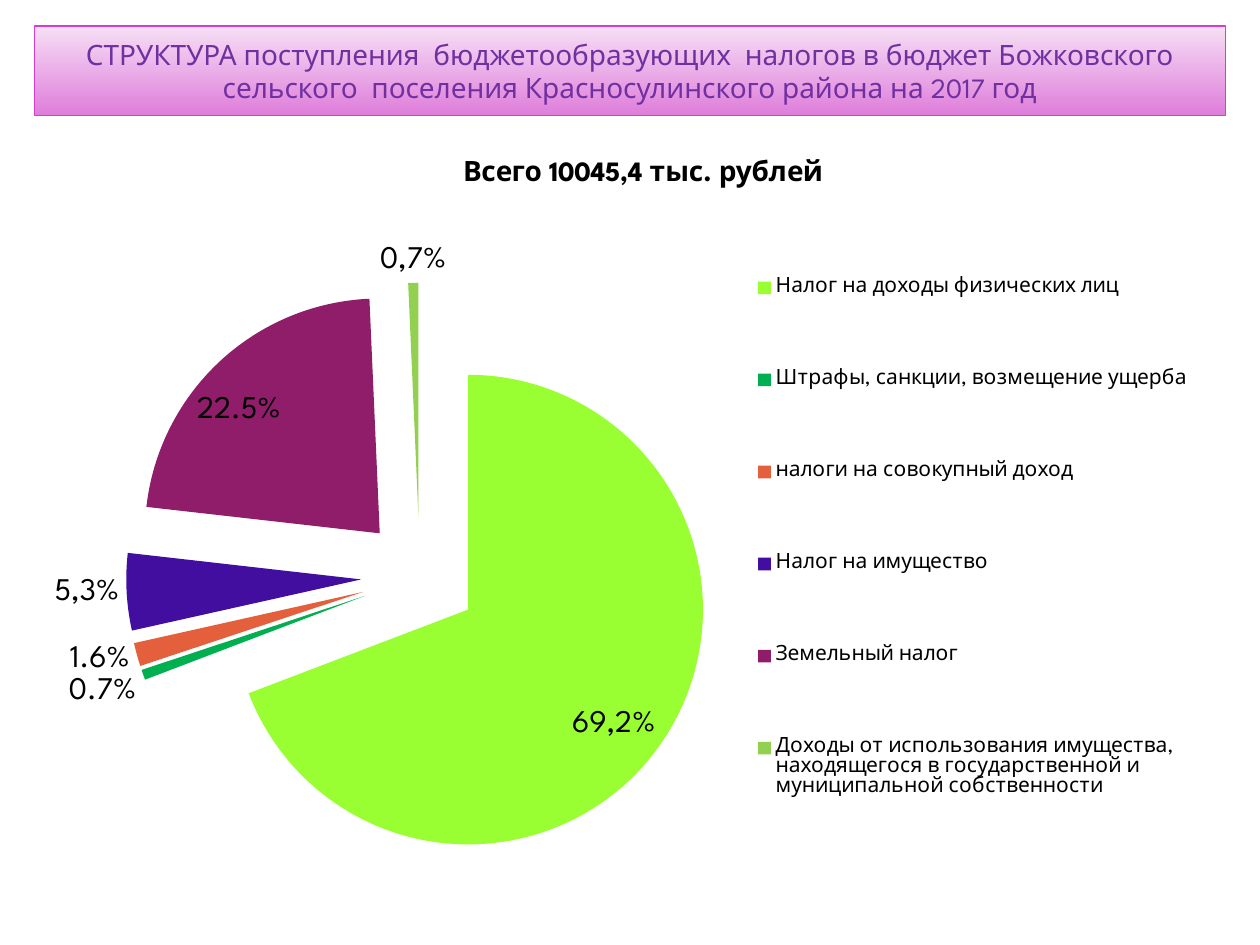
from dataclasses import dataclass

from lxml.etree import Element, SubElement
from pptx import Presentation
from pptx.chart.data import CategoryChartData
from pptx.dml.color import RGBColor
from pptx.enum.chart import XL_CHART_TYPE as ChartType
from pptx.enum.chart import XL_LABEL_POSITION as LabelPlace
from pptx.enum.chart import XL_LEGEND_POSITION as LegendPlace
from pptx.enum.shapes import MSO_SHAPE as Shape
from pptx.enum.text import MSO_ANCHOR as Anchor
from pptx.enum.text import PP_ALIGN as Align
from pptx.oxml.ns import qn
from pptx.util import Inches, Pt

FONT = "League Spartan"
WIDTH, HEIGHT = Inches(10), Inches(7.5)
COLOURS = {
    "text": "000000", "heading": "7030A0", "border": "D53DD0",
    "band_top": "F6DFF5", "band_bottom": "DF7DDB",
    "income": "99FF33", "fines": "00B050", "combined": "E45F3C",
    "property": "420EA0", "land": "8F1D69", "usage": "92D050",
}


@dataclass
class Area:
    """A rectangle given as shares of its container; no width means automatic size."""
    left: float
    top: float
    width: float = 0
    height: float = 0

    def on_slide(self) -> tuple:
        return (int(self.left * WIDTH), int(self.top * HEIGHT),
                int(self.width * WIDTH), int(self.height * HEIGHT))


@dataclass
class Tax:
    name: str
    share: float
    colour: str
    label: str = ""
    place: LabelPlace = LabelPlace.OUTSIDE_END


HEADING = ("СТРУКТУРА поступления  бюджетообразующих  налогов в бюджет Божковского "
           "сельского  поселения Красносулинского района на 2017 год")
HEADING_AREA = Area(0.0275, 0.0275, 0.945, 0.095)
CHART_AREA = Area(0.028, 0.153, 0.945, 0.808)
TITLE_AREA = Area(0.355, 0.012)
PLOT_AREA = Area(0.076, 0.181, 0.494, 0.769)
LEGEND_AREA = Area(0.6, 0.08, 0.375, 0.87)
EXPLOSION = 25
TAXES = [
    Tax("Налог на доходы физических лиц", 69.2, "income", "69,2%", LabelPlace.INSIDE_END),
    Tax("Штрафы, санкции, возмещение ущерба", 0.7, "fines"),
    Tax("налоги на совокупный доход", 1.6, "combined"),
    Tax("Налог на имущество", 5.3, "property", "5,3%"),
    Tax("Земельный налог", 22.5, "land"),
    Tax("Доходы от использования имущества, находящегося в государственной "
        "и муниципальной собственности", 0.7, "usage", "0,7%"),
]


def rgb(name: str) -> RGBColor:
    return RGBColor.from_string(COLOURS[name])


def style(font, size: float, colour: str = "text", bold: bool = False) -> None:
    font.name, font.size, font.bold = FONT, Pt(size), bold
    font.color.rgb = rgb(colour)


def add_span(para, text: str, size: float, colour: str = "text", bold: bool = False) -> None:
    span = para.add_run()
    span.text = text
    style(span.font, size, colour, bold)


def manual_layout(area: Area, inner: bool = False):
    layout = Element(qn("c:layout"))
    manual = SubElement(layout, qn("c:manualLayout"))
    settings = [("layoutTarget", "inner")] if inner else []
    settings += [("xMode", "edge"), ("yMode", "edge"), ("x", area.left), ("y", area.top)]
    if area.width:
        settings += [("w", area.width), ("h", area.height)]
    for tag, value in settings:
        SubElement(manual, qn(f"c:{tag}")).set("val", str(value))
    return layout


def place_part(part, area: Area, follower: str, inner: bool = False) -> None:
    """Put a manual layout into a chart part, just before its follower element."""
    for old in part.findall(qn("c:layout")):
        part.remove(old)
    part.find(qn(follower)).addprevious(manual_layout(area, inner))


def explosion():
    element = Element(qn("c:explosion"))
    element.set("val", str(EXPLOSION))
    return element


def add_heading(page) -> None:
    box = page.shapes.add_shape(Shape.RECTANGLE, *HEADING_AREA.on_slide())
    box.shadow.inherit = False
    box.fill.gradient()
    box.fill.gradient_angle = 270
    for stop, position, name in zip(box.fill.gradient_stops, (0, 1),
                                    ("band_top", "band_bottom")):
        stop.position = position
        stop.color.rgb = rgb(name)
    box.line.color.rgb = rgb("border")
    box.line.width = Pt(0.75)
    frame = box.text_frame
    frame.word_wrap = True
    frame.vertical_anchor = Anchor.MIDDLE
    para = frame.paragraphs[0]
    para.alignment = Align.CENTER
    add_span(para, HEADING, 16, "heading")


def style_slice(series, index: int, tax: Tax) -> None:
    point = series.points[index]
    point.format.fill.solid()
    point.format.fill.fore_color.rgb = rgb(tax.colour)
    point.format.fill._xPr.addprevious(explosion())
    if tax.label:
        label = point.data_label
        add_span(label.text_frame.paragraphs[0], tax.label, 18)
        label.position = tax.place


def add_pie(page) -> None:
    data = CategoryChartData()
    data.categories = [tax.name for tax in TAXES]
    data.add_series("Series 1", [tax.share for tax in TAXES])
    chart = page.shapes.add_chart(ChartType.PIE, *CHART_AREA.on_slide(), data).chart
    style(chart.font, 18)

    # Chart title
    chart.has_title = True
    title = chart.chart_title
    add_span(title.text_frame.paragraphs[0], "Всего 10045,4 тыс. рублей", 16, bold=True)
    place_part(title._element, TITLE_AREA, "c:overlay")

    # Legend
    chart.has_legend = True
    legend = chart.legend
    legend.position = LegendPlace.RIGHT
    legend.include_in_layout = False
    style(legend.font, 12)
    place_part(legend._element, LEGEND_AREA, "c:overlay")

    # Plot area, slices and labels
    place_part(chart._chartSpace.chart.plotArea, PLOT_AREA, "c:pieChart", inner=True)
    plot = chart.plots[0]
    plot.vary_by_categories = True
    series = plot.series[0]
    labels = series.data_labels
    labels.show_percentage = True
    labels.show_value = False
    labels.number_format = "0.0%"
    labels.number_format_is_linked = False
    labels.position = LabelPlace.BEST_FIT
    style(labels.font, 18)
    for index, tax in enumerate(TAXES):
        style_slice(series, index, tax)
    series._element.find(qn("c:dPt")).addprevious(explosion())


def main() -> None:
    deck = Presentation()
    deck.slide_width, deck.slide_height = WIDTH, HEIGHT
    page = deck.slides.add_slide(deck.slide_layouts[6])
    add_heading(page)
    add_pie(page)
    deck.save("out.pptx")


if __name__ == "__main__":
    main()
